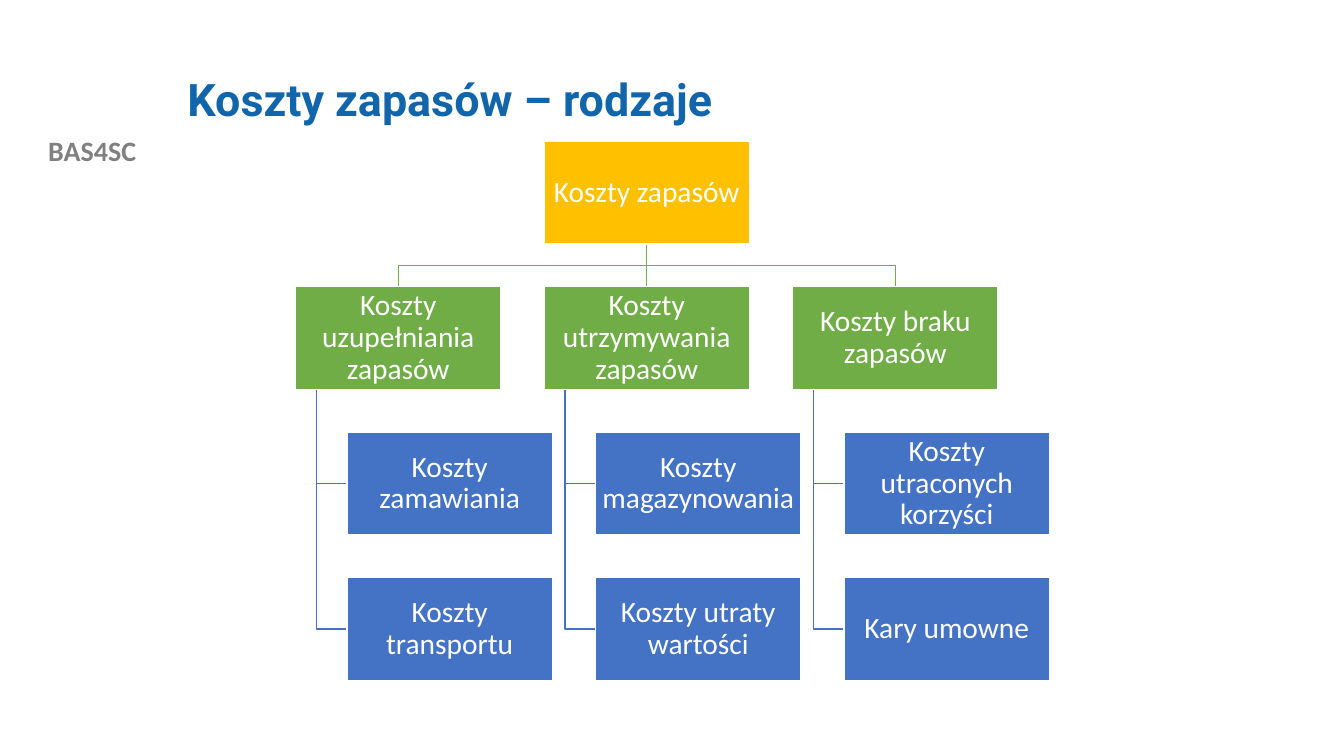
from pptx import Presentation
from pptx.dml.color import RGBColor
from pptx.enum.shapes import MSO_CONNECTOR, MSO_SHAPE
from pptx.enum.text import MSO_ANCHOR, PP_ALIGN
from pptx.oxml.ns import qn
from pptx.util import Inches, Pt
from lxml import etree

RECT = MSO_SHAPE.RECTANGLE
STRAIGHT = MSO_CONNECTOR.STRAIGHT
LEFT, CENTER = PP_ALIGN.LEFT, PP_ALIGN.CENTER
TOP, MIDDLE = MSO_ANCHOR.TOP, MSO_ANCHOR.MIDDLE

YELLOW, GREEN, BLUE, WHITE = "FFC000", "70AD47", "4472C4", "FFFFFF"
BOX_W, BOX_H = 2.04, 1.02
TREE_LEFT, TREE_TOP = 2.93, 1.4
COLUMN_STEP = (7.86 - TREE_LEFT) / 2
ROW_STEP = (5.73 - TREE_TOP) / 3
STEM_INDENT, CHILD_INDENT = 0.21, 0.51

ROOT = "Koszty zapasów"
BRANCHES = [
    ("Koszty uzupełniania zapasów", ["Koszty zamawiania", "Koszty transportu"]),
    ("Koszty utrzymywania zapasów", ["Koszty magazynowania", "Koszty utraty wartości"]),
    ("Koszty braku zapasów", ["Koszty utraconych korzyści", "Kary umowne"]),
]


def color(value):
    return RGBColor.from_string(value)


def write(frame, text, size=21, font="Calibri", ink=WHITE, bold=False,
          align=CENTER, anchor=MIDDLE, spacing=0.9, inset=0.01):
    frame.word_wrap = True
    frame.vertical_anchor = anchor
    frame.margin_left = frame.margin_right = Inches(inset)
    frame.margin_top = frame.margin_bottom = Inches(min(inset, 0.05))
    paragraph = frame.paragraphs[0]
    paragraph.alignment = align
    paragraph.line_spacing = spacing
    run = paragraph.add_run()
    run.text = text
    run.font.size = Pt(size)
    run.font.name = font
    run.font.bold = bold
    run.font.color.rgb = color(ink)


class CostTree:
    """Draws labels, boxes and branch lines on one slide in a shared style."""

    def __init__(self, slide, line_width=1):
        self.shapes = slide.shapes
        self.line_width = Pt(line_width)

    def outline(self, shape, ink):
        shape.line.color.rgb = color(ink)
        shape.line.width = self.line_width

    def label(self, text, left, top, width, height, **style):
        area = self.shapes.add_textbox(*map(Inches, (left, top, width, height)))
        write(area.text_frame, text, inset=0.1, **style)

    def box(self, text, left, top, fill):
        cost = self.shapes.add_shape(
            RECT, *map(Inches, (left, top, BOX_W, BOX_H)))
        cost.shadow.inherit = False
        cost.fill.solid()
        cost.fill.fore_color.rgb = color(fill)
        self.outline(cost, WHITE)
        write(cost.text_frame, text)

    def bent_line(self, points, ink):
        start, *rest = [(Inches(x), Inches(y)) for x, y in points]
        builder = self.shapes.build_freeform(*start)
        builder.add_line_segments(rest, close=False)
        branch = builder.convert_to_shape()
        branch.shadow.inherit = False
        branch.fill.background()
        self.outline(branch, ink)

    def straight_line(self, x, top, bottom, ink):
        stem = self.shapes.add_connector(
            STRAIGHT, *map(Inches, (x, top, x, bottom)))
        etree.SubElement(stem._element.spPr, qn("a:effectLst"))
        self.outline(stem, ink)


def main():
    deck = Presentation()
    deck.slide_width, deck.slide_height = Inches(13.33), Inches(7.5)
    tree = CostTree(deck.slides.add_slide(deck.slide_layouts[6]))

    tree.label("BAS4SC", 0, 1.28, 1.83, 0.44, size=20, ink="808080",
               bold=True, anchor=TOP, spacing=1)
    tree.label("Koszty zapasów – rodzaje", 1.76, 0.4, 10.66, 1.22, size=32,
               font="Roboto", ink="1065AB", bold=True, align=LEFT)

    columns = [TREE_LEFT + COLUMN_STEP * i for i in range(len(BRANCHES))]
    rows = [TREE_TOP + ROW_STEP * i for i in range(4)]
    root_left = columns[1]
    root_x, root_bottom = root_left + BOX_W / 2, rows[0] + BOX_H
    fork_y = (root_bottom + rows[1]) / 2

    for left in columns:
        stem_x = left + STEM_INDENT
        for top in rows[2:]:
            child_y = top + BOX_H / 2
            tree.bent_line([(stem_x, rows[1] + BOX_H), (stem_x, child_y),
                            (left + CHILD_INDENT, child_y)], BLUE)
        if left == root_left:
            tree.straight_line(root_x, root_bottom, rows[1], GREEN)
        else:
            branch_x = left + BOX_W / 2
            tree.bent_line([(root_x, root_bottom), (root_x, fork_y),
                            (branch_x, fork_y), (branch_x, rows[1])], GREEN)

    tree.box(ROOT, root_left, rows[0], YELLOW)
    for left, (group, costs) in zip(columns, BRANCHES):
        tree.box(group, left, rows[1], GREEN)
        for top, cost in zip(rows[2:], costs):
            tree.box(cost, left + CHILD_INDENT, top, BLUE)

    deck.save("out.pptx")


if __name__ == "__main__":
    main()
